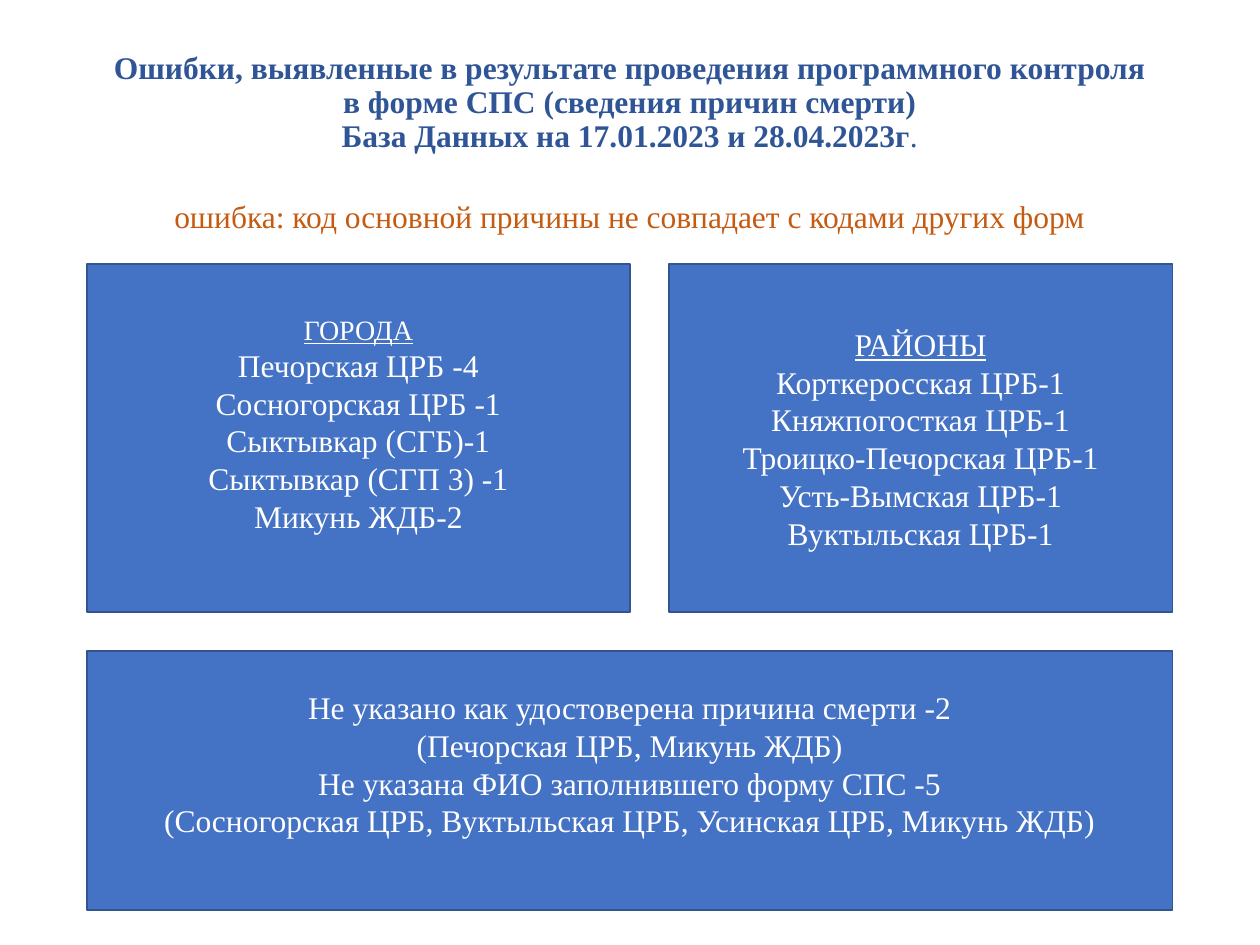
from dataclasses import dataclass

from pptx import Presentation
from pptx.dml.color import RGBColor
from pptx.enum.shapes import MSO_SHAPE as Preset
from pptx.enum.text import MSO_ANCHOR as Anchor, PP_ALIGN as Align
from pptx.slide import Slide
from pptx.text.text import TextFrame
from pptx.util import Cm, Pt

HEADING_BLUE = RGBColor(0x2F, 0x55, 0x97)
ERROR_ORANGE = RGBColor(0xC5, 0x5A, 0x11)
PANEL_BLUE = RGBColor(0x44, 0x72, 0xC4)
PANEL_EDGE = RGBColor(0x32, 0x54, 0x91)
WHITE = RGBColor(0xFF, 0xFF, 0xFF)

FONT = "Times New Roman"
LEFT = 1.75
WIDTH = 21.89
RIGHT = LEFT + WIDTH
DISTRICTS_WIDTH = 10.16
GROUPS_TOP = 5.33
GROUPS_HEIGHT = 7.01


@dataclass(frozen=True)
class Words:
    text: str
    size: float = 18
    bold: bool = False
    underline: bool = False


Line = tuple[Words, ...]


@dataclass(frozen=True)
class Block:
    left: float
    top: float
    width: float
    height: float
    lines: tuple[Line, ...]
    color: RGBColor = WHITE
    anchor: Anchor = Anchor.MIDDLE
    bottom_inset: float = 0.13
    spacing: float = 1.0

    def bounds(self) -> tuple[Cm, ...]:
        return tuple(Cm(v) for v in (self.left, self.top, self.width, self.height))


def plain(*texts: str) -> tuple[Line, ...]:
    return tuple((Words(text),) for text in texts)


def write(frame: TextFrame, block: Block) -> None:
    frame.word_wrap = True
    frame.vertical_anchor = block.anchor
    frame.margin_bottom = Cm(block.bottom_inset)
    for index, line in enumerate(block.lines):
        paragraph = frame.add_paragraph() if index else frame.paragraphs[0]
        paragraph.alignment = Align.CENTER
        paragraph.line_spacing = block.spacing
        for words in line:
            run = paragraph.add_run()
            run.text = words.text
            run.font.name = FONT
            run.font.size = Pt(words.size)
            run.font.bold = words.bold
            run.font.underline = words.underline
            run.font.color.rgb = block.color


def draw_text(slide: Slide, block: Block) -> None:
    write(slide.shapes.add_textbox(*block.bounds()).text_frame, block)


def draw_panel(slide: Slide, block: Block) -> None:
    panel = slide.shapes.add_shape(Preset.RECTANGLE, *block.bounds())
    panel.shadow.inherit = False
    panel.fill.solid()
    panel.fill.fore_color.rgb = PANEL_BLUE
    panel.line.color.rgb = PANEL_EDGE
    panel.line.width = Pt(1)
    write(panel.text_frame, block)


HEADING = Block(
    LEFT, 1.02, WIDTH, 2.92,
    (
        (Words("Ошибки, выявленные в результате проведения программного контроля", bold=True),),
        (Words("в форме СПС (сведения причин смерти)", bold=True),),
        (Words("База Данных на 17.01.2023 и 28.04.2023г", bold=True), Words(".")),
    ),
    color=HEADING_BLUE, bottom_inset=0.91, spacing=0.9,
)
ERROR = Block(
    LEFT, 3.94, WIDTH, 13.23,
    plain("ошибка: код основной причины не совпадает с кодами других форм"),
    color=ERROR_ORANGE, anchor=Anchor.TOP, spacing=0.9,
)
DISTRICTS = Block(
    RIGHT - DISTRICTS_WIDTH, GROUPS_TOP, DISTRICTS_WIDTH, GROUPS_HEIGHT,
    (
        (Words("РАЙОНЫ", underline=True),),
        *plain(
            "Корткеросская ЦРБ-1",
            "Княжпогосткая ЦРБ-1",
            "Троицко-Печорская ЦРБ-1",
            "Усть-Вымская ЦРБ-1",
            "Вуктыльская ЦРБ-1",
        ),
    ),
)
CITIES = Block(
    LEFT, GROUPS_TOP, 10.95, GROUPS_HEIGHT,
    (
        (Words("ГОРОДА", size=16, underline=True),),
        *plain(
            "Печорская ЦРБ -4",
            "Сосногорская ЦРБ -1",
            "Сыктывкар (СГБ)-1",
            "Сыктывкар (СГП 3) -1",
            "Микунь ЖДБ-2",
        ),
    ),
    bottom_inset=0.72,
)
OMISSIONS = Block(
    LEFT, 13.13, WIDTH, 5.21,
    plain(
        "Не указано как удостоверена причина смерти -2",
        "(Печорская ЦРБ, Микунь ЖДБ)",
        "Не указана ФИО заполнившего форму СПС -5",
        "(Сосногорская ЦРБ, Вуктыльская ЦРБ, Усинская ЦРБ, Микунь ЖДБ)",
    ),
    bottom_inset=0.81,
)


def main() -> None:
    deck = Presentation()
    deck.slide_width, deck.slide_height = Cm(25.4), Cm(19.05)
    slide = deck.slides.add_slide(deck.slide_layouts[6])
    for block in (HEADING, ERROR):
        draw_text(slide, block)
    for block in (DISTRICTS, CITIES, OMISSIONS):
        draw_panel(slide, block)
    deck.save("out.pptx")


if __name__ == "__main__":
    main()
